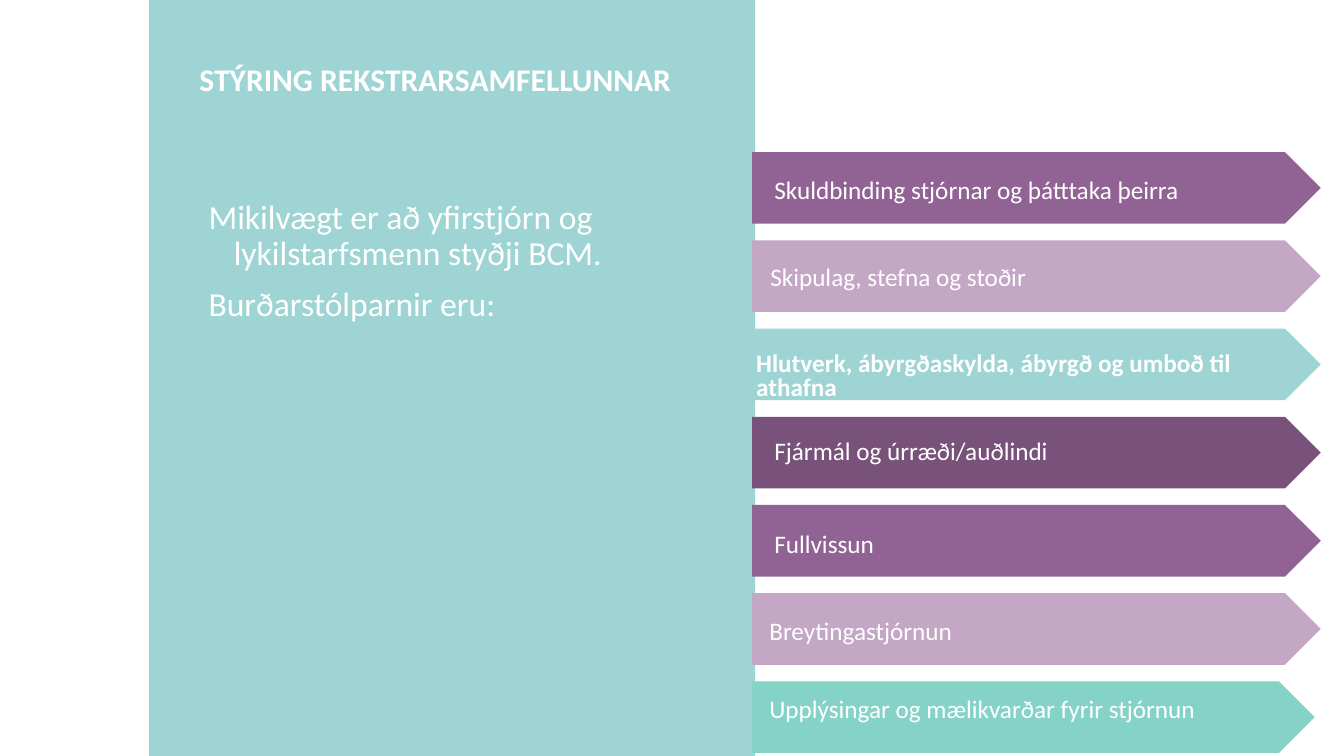
from pptx import Presentation
from pptx.dml.color import RGBColor
from pptx.enum.shapes import MSO_SHAPE
from pptx.enum.text import MSO_ANCHOR, PP_ALIGN
from pptx.util import Inches, Pt

RECT, ARROW = MSO_SHAPE.RECTANGLE, MSO_SHAPE.PENTAGON
TOP, LEFT = MSO_ANCHOR.TOP, PP_ALIGN.LEFT
W, H = 13.33, 7.5
WHITE, TEAL, MINT = "FFFFFF", "9ED4D3", "85D2C7"
PURPLE, LILAC, PLUM = "916395", "C3A7C5", "79527B"

TITLE = "STÝRING REKSTRARSAMFELLUNNAR"
INTRO = ["Mikilvægt er að yfirstjórn og lykilstarfsmenn styðji BCM.",
         "Burðarstólparnir eru:"]

NORMAL, LOOSE = Pt(17.1), Pt(22.4)
PILLARS = [
    ("Skuldbinding stjórnar og þátttaka þeirra", PURPLE, 5.64, 0.18, 0.26, NORMAL, False),
    ("Skipulag, stefna og stoðir", LILAC, 5.64, 0.14, 0.18, LOOSE, False),
    ("Hlutverk, ábyrgðaskylda, ábyrgð og umboð til athafna", TEAL, 5.64, 0, 0.23, NORMAL, True),
    ("Fjármál og úrræði/auðlindi", PLUM, 5.64, 0.18, 0.23, NORMAL, False),
    ("Fullvissun", PURPLE, 5.64, 0.18, 0.27, NORMAL, False),
    ("Breytingastjórnun", LILAC, 5.64, 0.13, 0.19, LOOSE, False),
    ("Upplýsingar og mælikvarðar fyrir stjórnun", MINT, 5.58, 0.13, 0.16, NORMAL, False),
]


def color(value):
    return RGBColor.from_string(value)


def add_block(s, kind, box, fill):
    sp = s.shapes.add_shape(kind, *map(Inches, box))
    sp.shadow.inherit = False
    sp.fill.solid()
    sp.fill.fore_color.rgb = color(fill)
    sp.line.fill.background()


def add_text(s, box, lines, size, spacing, bold=False, inset=(0.1, 0.05), hanging=0):
    tf = s.shapes.add_textbox(*map(Inches, box)).text_frame
    dx, dy = map(Inches, inset)
    frame = dict(word_wrap=True, vertical_anchor=TOP, margin_left=dx,
                 margin_right=dx, margin_top=dy, margin_bottom=dy)
    for name, value in frame.items():
        setattr(tf, name, value)
    for i, line in enumerate(lines):
        p = tf.paragraphs[0] if i == 0 else tf.add_paragraph()
        p.alignment = LEFT
        p.line_spacing = spacing
        if i:
            p.space_before = Pt(10)
        if hanging:
            pPr = p._p.get_or_add_pPr()
            pPr.set("marL", str(Inches(hanging)))
            pPr.set("indent", str(-Inches(hanging)))
        r = p.add_run()
        r.text = line
        for name, value in dict(name="Calibri", size=Pt(size), bold=bold).items():
            setattr(r.font, name, value)
        r.font.color.rgb = color(WHITE)


def add_panel(s, x, y, w, h):
    add_block(s, RECT, (x, y, w, h), TEAL)
    add_text(s, (x + 0.49, y + 1.94, 5.05, 4.95), INTRO, 24, 0.9, hanging=0.25)
    add_text(s, (x + 0.4, y + 0.65, 5.16, 0.64), [TITLE], 22.5, 0.7, bold=True)


def add_pillars(s, x, y, w, h):
    bar = 0.71
    pitch = (h - bar) / (len(PILLARS) - 1)
    for i, (label, fill, length, dx, dy, spacing, bold) in enumerate(PILLARS):
        top = y + i * pitch
        add_block(s, ARROW, (x, top, length, bar), fill)
        add_text(s, (x + dx, top + dy, w - dx, 0.3), [label], 18, spacing,
                 bold, inset=(0.04, 0.02))


def main():
    prs = Presentation()
    prs.slide_width, prs.slide_height = Inches(W), Inches(H)
    s = prs.slides.add_slide(prs.slide_layouts[6])
    add_panel(s, 1.48, 0, 6.01, H)
    add_pillars(s, 7.46, 1.51, 5.64, 5.96)
    prs.save("out.pptx")


if __name__ == "__main__":
    main()
